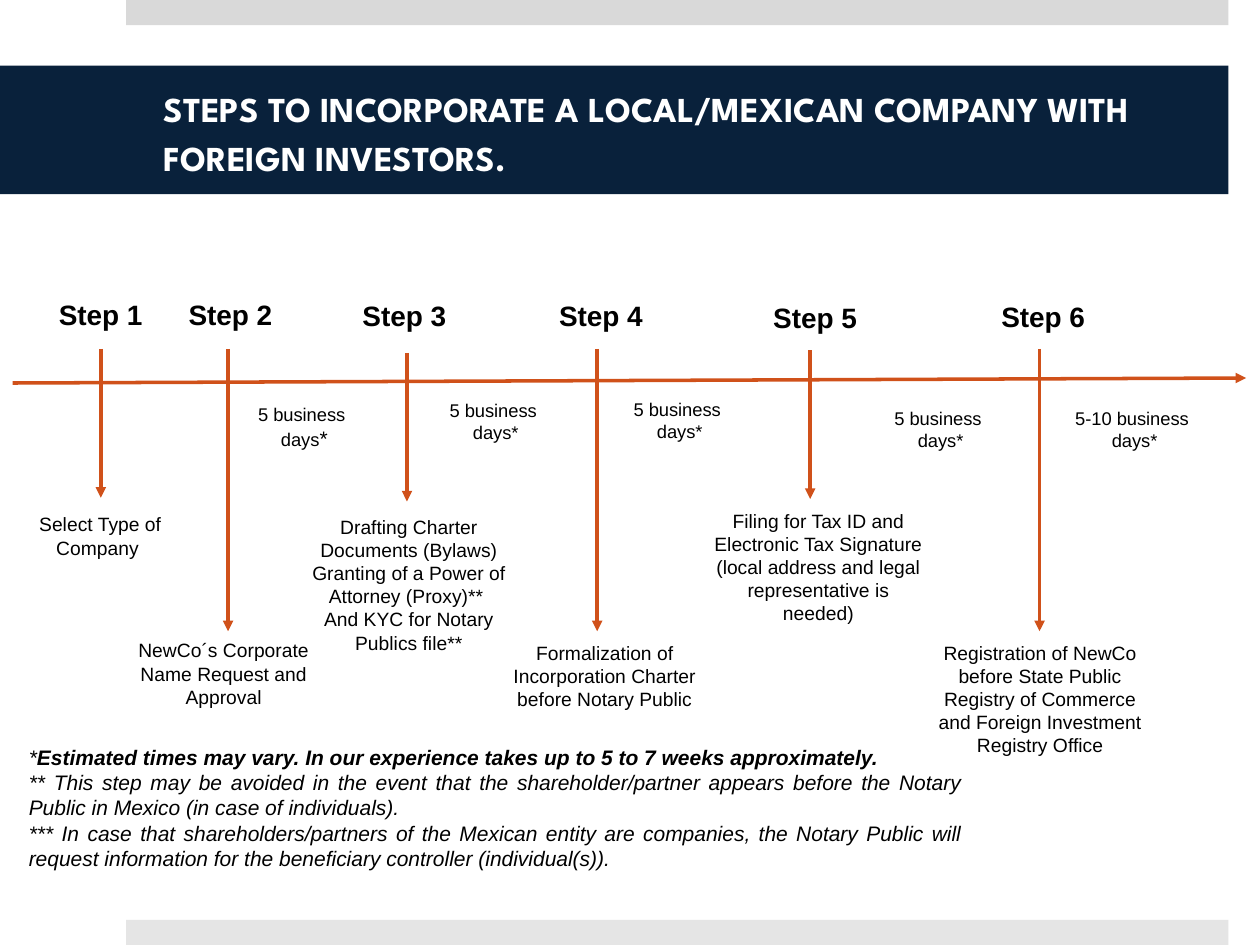
import pptx
import pptx.util
from lxml import etree
from pptx.dml.color import RGBColor
from pptx.enum.shapes import MSO_CONNECTOR, MSO_SHAPE
from pptx.enum.text import MSO_ANCHOR, MSO_AUTO_SIZE, PP_ALIGN
from pptx.oxml.ns import qn

PX = 9144  # EMU per px, 100 px to the inch
COLORS = {"navy": "09213B", "orange": "D0511A", "white": "FFFFFF",
          "black": "000000", "top": "D9D9D9", "bottom": "E5E5E5"}

TITLE = "STEPS TO INCORPORATE A LOCAL/MEXICAN COMPANY WITH FOREIGN INVESTORS."
BARS = [("top", 0), ("bottom", 730)]

# label box, arrow (x, top, bottom), description box, description paragraphs
STEPS = [
    ((32, 231, 91), (80, 277, 395), (2, 402, 155, 47),
     ["Select Type of Company "]),
    ((118, 231, 108), (181, 277, 501), (85, 502, 185, 66),
     ["NewCo´s Corporate Name Request and Approval"]),
    ((276, 232, 88), (323, 280, 398), (232, 404, 185, 140),
     ["Drafting Charter Documents (Bylaws)",
      "Granting of a Power of Attorney (Proxy)** ",
      "And KYC for Notary Publics file**"]),
    ((412, 232, 108), (474, 277, 501), (377, 504, 206, 66),
     ["Formalization of Incorporation Charter before Notary Public"]),
    ((582, 234, 108), (643, 278, 396), (557, 399, 185, 121),
     ["Filing for Tax ID and Electronic Tax Signature (local address and "
      "legal representative is needed)"]),
    ((763, 233, 108), (825, 277, 501), (733, 504, 185, 103),
     ["Registration of NewCo before State Public Registry of Commerce and "
      "Foreign Investment Registry Office"]),
]

# left, top, width, days, size of the asterisk
DURATIONS = [
    (149, 315, 185, "5", 12),
    (301, 312, 185, "5", 10.5),
    (477, 311, 125, "5", 10.5),
    (684, 318, 125, "5", 10.5),
    (838, 318, 125, "5-10", 10.5),
]

NOTES = [
    ["*", "Estimated times may vary. In our experience takes up to 5 to 7 "
     "weeks approximately."],
    ["** This step may be avoided in the event that the shareholder/partner "
     "appears before the Notary Public in Mexico (in case of individuals). "],
    ["*** In case that shareholders/partners of the Mexican entity are "
     "companies, the Notary Public will request information for the "
     "beneficiary controller (individual(s))."],
]


def emu(*lengths):
    return [n * PX for n in lengths]


def rgb(name):
    return RGBColor.from_string(COLORS[name])


def style(r, size, color="black", font="Arial", bold=False, italic=False):
    r.font.size = pptx.util.Pt(size)
    r.font.name = font
    r.font.bold = bold
    r.font.italic = italic
    r.font.color.rgb = rgb(color)


def add_text(s, box, paragraphs, size, align, **fmt):
    """Add a text box; each paragraph is a list of run texts. Return its paragraphs."""
    tf = s.shapes.add_textbox(*emu(*box)).text_frame
    tf.word_wrap = True
    for i, texts in enumerate(paragraphs):
        p = tf.add_paragraph() if i else tf.paragraphs[0]
        p.alignment = align
        for text in texts:
            r = p.add_run()
            r.text = text
            style(r, size, **fmt)
    return tf.paragraphs


def add_arrow(s, x1, y1, x2, y2):
    line = s.shapes.add_connector(MSO_CONNECTOR.STRAIGHT, *emu(x1, y1, x2, y2))
    line.line.color.rgb = rgb("orange")
    line.line.width = pptx.util.Pt(2)
    etree.SubElement(line.line._get_or_add_ln(), qn("a:tailEnd"), type="triangle")
    etree.SubElement(line._element.spPr, qn("a:effectLst"))


def add_bar(s, color, top):
    sp = s.shapes.add_shape(MSO_SHAPE.RECTANGLE, *emu(100, top, 875, 20))
    sp.shadow.inherit = False
    sp.fill.solid()
    sp.fill.fore_color.rgb = rgb(color)
    sp.line.fill.background()


def format_title(sp):
    sp.left, sp.top, sp.width, sp.height = emu(0, 52, 975, 102)
    sp.fill.solid()
    sp.fill.fore_color.rgb = rgb("navy")
    tf = sp.text_frame
    tf.text = TITLE
    tf.word_wrap = True
    tf.auto_size = MSO_AUTO_SIZE.NONE
    tf.vertical_anchor = MSO_ANCHOR.MIDDLE
    tf.margin_left, tf.margin_right = emu(130, 30)
    p = tf.paragraphs[0]
    p.alignment = PP_ALIGN.LEFT
    p.line_spacing = pptx.util.Pt(28)
    style(p.runs[0], 20, "white", "League Spartan", bold=True)


def main():
    prs = pptx.Presentation()
    prs.slide_width, prs.slide_height = emu(1000, 750)
    s = prs.slides.add_slide(prs.slide_layouts[5])
    format_title(s.shapes.title)
    for color, top in BARS:
        add_bar(s, color, top)

    add_arrow(s, 10, 304, 989, 300)
    for number, (label, (x, top, bottom), box, lines) in enumerate(STEPS, 1):
        add_text(s, (*label, 37), [[f"Step {number}"]], 16, PP_ALIGN.RIGHT, bold=True)
        add_arrow(s, x, top, x, bottom)
        add_text(s, box, [[line] for line in lines], 11, PP_ALIGN.CENTER)

    for left, top, width, days, star in DURATIONS:
        ps = add_text(s, (left, top, width, 47), [[f"{days} business "], ["days", "*"]],
                      10.5, PP_ALIGN.CENTER)
        ps[1].runs[1].font.size = pptx.util.Pt(star)

    ps = add_text(s, (13, 586, 761, 111), NOTES, 12, PP_ALIGN.JUSTIFY, italic=True)
    ps[0].runs[1].font.bold = True
    prs.save("out.pptx")


if __name__ == "__main__":
    main()
